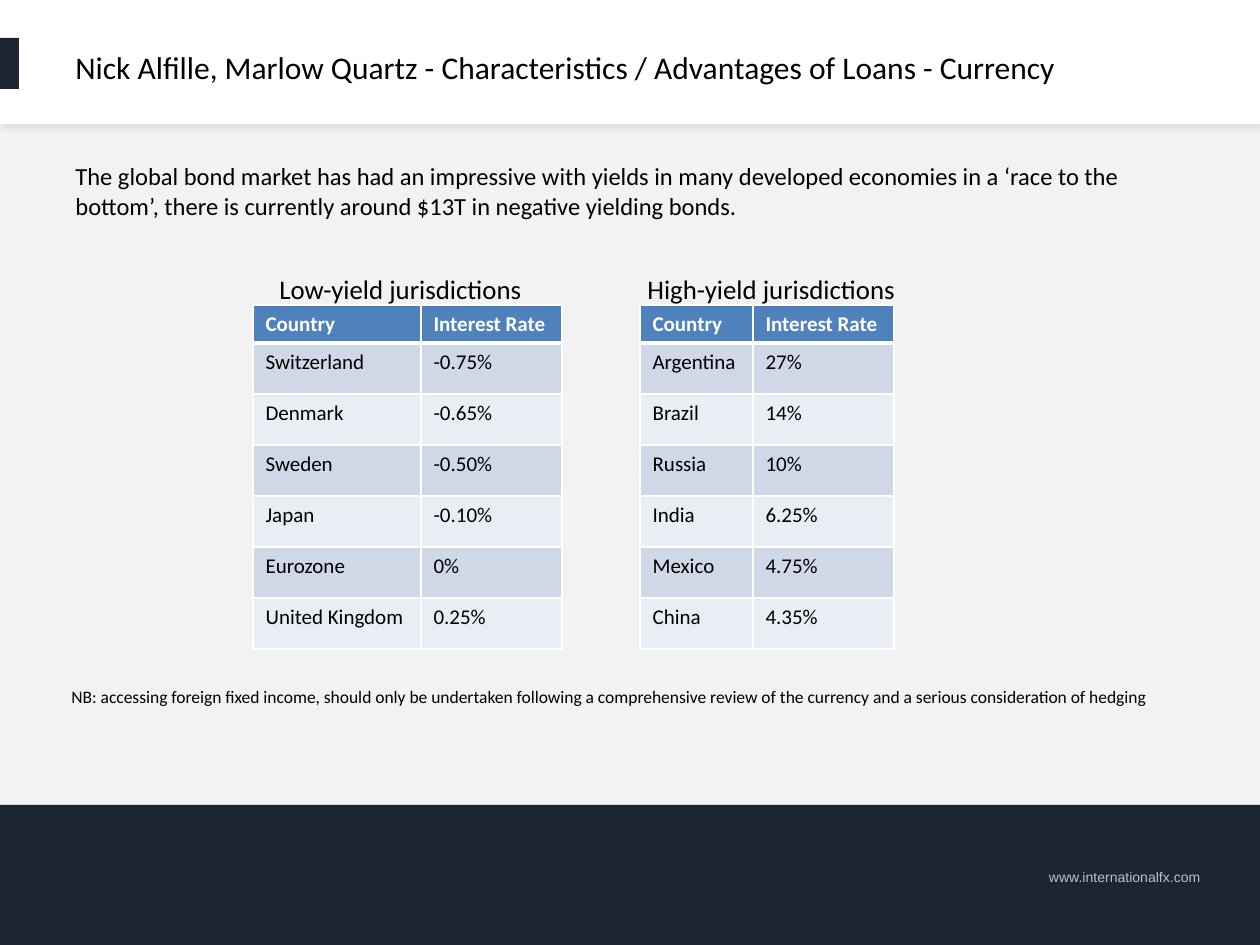
from pptx import Presentation
from pptx.dml.color import RGBColor
from pptx.enum.shapes import MSO_SHAPE
from pptx.enum.text import MSO_ANCHOR, PP_ALIGN
from pptx.oxml import parse_xml
from pptx.oxml.ns import nsdecls, qn
from pptx.util import Emu, Pt

RECT = MSO_SHAPE.RECTANGLE
LEFT, RIGHT = PP_ALIGN.LEFT, PP_ALIGN.RIGHT
TOP, MIDDLE = MSO_ANCHOR.TOP, MSO_ANCHOR.MIDDLE

BLACK = RGBColor(0x00, 0x00, 0x00)
WHITE = RGBColor(0xFF, 0xFF, 0xFF)
PAPER = RGBColor(0xF2, 0xF2, 0xF2)
NAVY = RGBColor(0x1C, 0x26, 0x33)
GREY = RGBColor(0xBF, 0xBF, 0xBF)
BLUE = RGBColor(0x4F, 0x81, 0xBD)
BANDS = (RGBColor(0xE9, 0xED, 0xF4), RGBColor(0xD0, 0xD8, 0xE8))

HEAD = ("Country", "Interest Rate")
LOW = (HEAD, ("Switzerland", "-0.75%"), ("Denmark", "-0.65%"),
       ("Sweden", "-0.50%"), ("Japan", "-0.10%"), ("Eurozone", "0%"),
       ("United Kingdom", "0.25%"))
HIGH = (HEAD, ("Argentina", "27%"), ("Brazil", "14%"), ("Russia", "10%"),
        ("India", "6.25%"), ("Mexico", "4.75%"), ("China", "4.35%"))
HEAD_H, ROW_H = 38, 51


def px(n):
    return Emu(round(n * 914400 / 126))


def style(para, size, color, face="Calibri", bold=False):
    font = para.font
    font.name, font.size, font.bold = face, Pt(size), bold
    font.color.rgb = color


def add_bar(slide, x, y, w, h, color):
    bar = slide.shapes.add_shape(RECT, px(x), px(y), px(w), px(h))
    bar.fill.solid()
    bar.fill.fore_color.rgb = color
    bar.line.fill.background()
    bar.shadow.inherit = False
    return bar


def drop_shadow(shape, blur, dist, alpha):
    """Cast a soft black shadow straight down; blur and dist in points."""
    effects = shape._element.spPr.find(qn("a:effectLst"))
    effects.append(parse_xml(
        f'<a:outerShdw {nsdecls("a")} blurRad="{Pt(blur)}" dist="{Pt(dist)}" '
        f'dir="5400000" algn="t" rotWithShape="0"><a:srgbClr val="{BLACK}">'
        f'<a:alpha val="{alpha * 1000}"/></a:srgbClr></a:outerShdw>'))


def add_text(slide, x, y, w, h, text, size, color=BLACK, face="Calibri",
             align=LEFT, anchor=TOP, tab=None):
    box = slide.shapes.add_textbox(px(x), px(y), px(w), px(h))
    frame = box.text_frame
    frame.word_wrap = True
    frame.vertical_anchor = anchor
    para = frame.paragraphs[0]
    para.text = text
    para.alignment = align
    if tab:
        para._p.get_or_add_pPr().append(parse_xml(
            f'<a:tabLst {nsdecls("a")}><a:tab pos="{px(tab)}" algn="l"/>'
            '</a:tabLst>'))
    style(para, size, color, face)


def set_borders(cell, base):
    """Rule all four sides in white, the bottom one base points wide."""
    props = cell._tc.get_or_add_tcPr()
    for side, width in (("L", 1), ("R", 1), ("T", 1), ("B", base)):
        props.append(parse_xml(
            f'<a:ln{side} {nsdecls("a")} w="{Pt(width)}"><a:solidFill>'
            f'<a:srgbClr val="{WHITE}"/></a:solidFill></a:ln{side}>'))


def add_rates(slide, x, y, widths, rows):
    height = HEAD_H + ROW_H * (len(rows) - 1)
    table = slide.shapes.add_table(len(rows), len(widths), px(x), px(y),
                                   px(sum(widths)), px(height)).table
    for col, width in zip(table.columns, widths):
        col.width = px(width)
    for r, row in enumerate(rows):
        head = r == 0
        table.rows[r].height = px(HEAD_H if head else ROW_H)
        for c, text in enumerate(row):
            cell = table.cell(r, c)
            cell.text = text
            style(cell.text_frame.paragraphs[0], 12,
                  WHITE if head else BLACK, bold=head)
            set_borders(cell, 3 if head else 1)
            cell.fill.solid()
            cell.fill.fore_color.rgb = BLUE if head else BANDS[r % 2]


def main():
    deck = Presentation()
    deck.slide_width, deck.slide_height = px(1260), px(945)
    slide = deck.slides.add_slide(deck.slide_layouts[6])
    slide.background.fill.solid()
    slide.background.fill.fore_color.rgb = PAPER

    banner = add_bar(slide, 0, 0, 1260, 124, WHITE)
    drop_shadow(banner, 3.2, 2, 7)
    add_bar(slide, 0, 805, 1260, 140, NAVY)
    add_text(slide, 731, 862, 482, 30, "www.internationalfx.com", 8, GREY,
             "Arial", RIGHT)
    add_bar(slide, 0, 38, 19, 51, NAVY)

    add_text(slide, 63, 38, 1134, 58,
             "Nick Alfille, Marlow Quartz - Characteristics / Advantages of "
             "Loans - Currency", 18, anchor=MIDDLE)
    add_text(slide, 267, 267, 694, 39,
             "Low-yield jurisdictions\tHigh-yield jurisdictions", 15.3,
             tab=368)
    add_rates(slide, 253, 305, (168, 141), LOW)
    add_rates(slide, 640, 305, (113, 141), HIGH)
    add_text(slide, 63, 155, 1103, 72,
             "The global bond market has had an impressive with yields in many "
             "developed economies in a ‘race to the bottom’, there is "
             "currently around $13T in negative yielding bonds.", 14)
    add_text(slide, 59, 680, 1142, 34,
             "NB: accessing foreign fixed income, should only be undertaken "
             "following a comprehensive review of the currency and a serious "
             "consideration of hedging", 10)
    deck.save("out.pptx")


if __name__ == "__main__":
    main()
